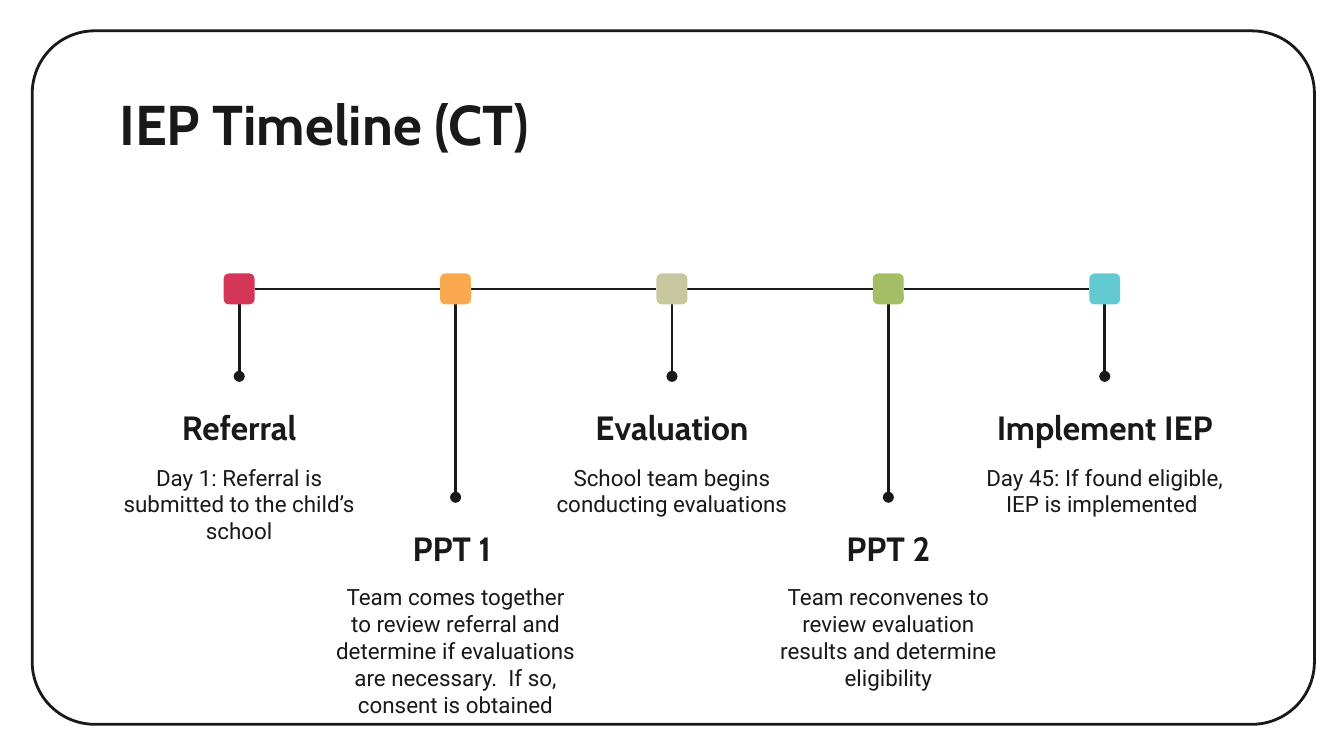
import pptx
import pptx.util
from lxml import etree
from pptx.dml.color import RGBColor
from pptx.enum.shapes import MSO_CONNECTOR, MSO_SHAPE
from pptx.enum.text import MSO_ANCHOR, PP_ALIGN
from pptx.oxml.ns import qn

Inches, Pt = pptx.util.Inches, pptx.util.Pt

TITLE = "IEP Timeline (CT)"
STEPS = [  # heading, description, marker colour
    ("Referral", "Day 1: Referral is submitted to the child’s school", "D43658"),
    ("PPT 1 ", "Team comes together to review referral and determine if "
     "evaluations are necessary.  If so, consent is obtained", "FAA94E"),
    ("Evaluation", "School team begins conducting evaluations", "C8C8A0"),
    ("PPT 2", "Team reconvenes to review evaluation results and determine "
     "eligibility", "A4BE66"),
    ("Implement IEP", "Day 45: If found eligible, IEP is implemented ", "63C9D0"),
]
INK = "191919"
SLIDE_W = 10
SLIDE_H = SLIDE_W * 9 / 16
FIRST_X, LAST_X = 1.78, 8.22
STEP_X = (LAST_X - FIRST_X) / (len(STEPS) - 1)
AXIS_Y, MARKER = 2.15, 0.23
STEM_ENDS = (2.8, 3.7)  # alternating short and long stems
DESC_TOPS = (3.35, 4.24)
TEXT_W = 1.98


def rgb(value):
    return RGBColor.from_string(value)


def add_round_rect(slide, x, y, w, h, radius):
    sp = slide.shapes.add_shape(MSO_SHAPE.ROUNDED_RECTANGLE,
                                Inches(x), Inches(y), Inches(w), Inches(h))
    sp.adjustments[0] = radius
    sp.shadow.inherit = False
    return sp


def add_line(slide, x1, y1, x2, y2, dot=False):
    """Draw a straight line, with a round dot at its end if asked."""
    line = slide.shapes.add_connector(MSO_CONNECTOR.STRAIGHT, Inches(x1),
                                      Inches(y1), Inches(x2), Inches(y2))
    line.line.color.rgb = rgb(INK)
    line.line.width = Pt(1.5)
    sp_pr = line._element.spPr
    if dot:
        etree.SubElement(sp_pr.find(qn("a:ln")), qn("a:tailEnd"), type="oval")
    etree.SubElement(sp_pr, qn("a:effectLst"))


def add_text(slide, text, x, y, w, h, font, size, bold=False,
             align=PP_ALIGN.CENTER, anchor=MSO_ANCHOR.TOP):
    sp = slide.shapes.add_textbox(Inches(x), Inches(y), Inches(w), Inches(h))
    tf = sp.text_frame
    tf.word_wrap = True
    tf.vertical_anchor = anchor
    tf.margin_left = tf.margin_right = Inches(0.1)
    tf.margin_top = tf.margin_bottom = Inches(0.1)
    p = tf.paragraphs[0]
    p.text = text
    p.alignment = align
    p.font.name, p.font.size, p.font.bold = font, Pt(size), bold
    p.font.color.rgb = rgb(INK)


def add_step(slide, index, heading, description, color):
    x = FIRST_X + index * STEP_X
    half = MARKER / 2
    end = STEM_ENDS[index % 2]
    left = x - TEXT_W / 2
    if index < len(STEPS) - 1:
        add_line(slide, x + half, AXIS_Y, x + STEP_X - half, AXIS_Y)
    add_line(slide, x, AXIS_Y + half, x, end, dot=True)
    marker = add_round_rect(slide, x - half, AXIS_Y - half, MARKER, MARKER, 0.17)
    marker.fill.solid()
    marker.fill.fore_color.rgb = rgb(color)
    marker.line.fill.background()
    add_text(slide, heading, left, end, TEXT_W, 0.63, "Cabin", 18, bold=True,
             anchor=MSO_ANCHOR.BOTTOM)
    add_text(slide, description, left, DESC_TOPS[index % 2], TEXT_W, 0.35,
             "Roboto", 12)


def main():
    prs = pptx.Presentation()
    prs.slide_width, prs.slide_height = Inches(SLIDE_W), Inches(SLIDE_H)
    slide = prs.slides.add_slide(prs.slide_layouts[6])

    frame = add_round_rect(slide, 0.24, 0.23, 9.54, 5.16, 0.09)
    frame.fill.background()
    frame.line.color.rgb = rgb(INK)
    frame.line.width = Pt(1.5)

    add_text(slide, TITLE, 0.79, 0.57, 8.43, 0.63, "Cabin", 30, bold=True,
             align=PP_ALIGN.LEFT)
    for index, step in enumerate(STEPS):
        add_step(slide, index, *step)
    prs.save("out.pptx")


if __name__ == "__main__":
    main()
